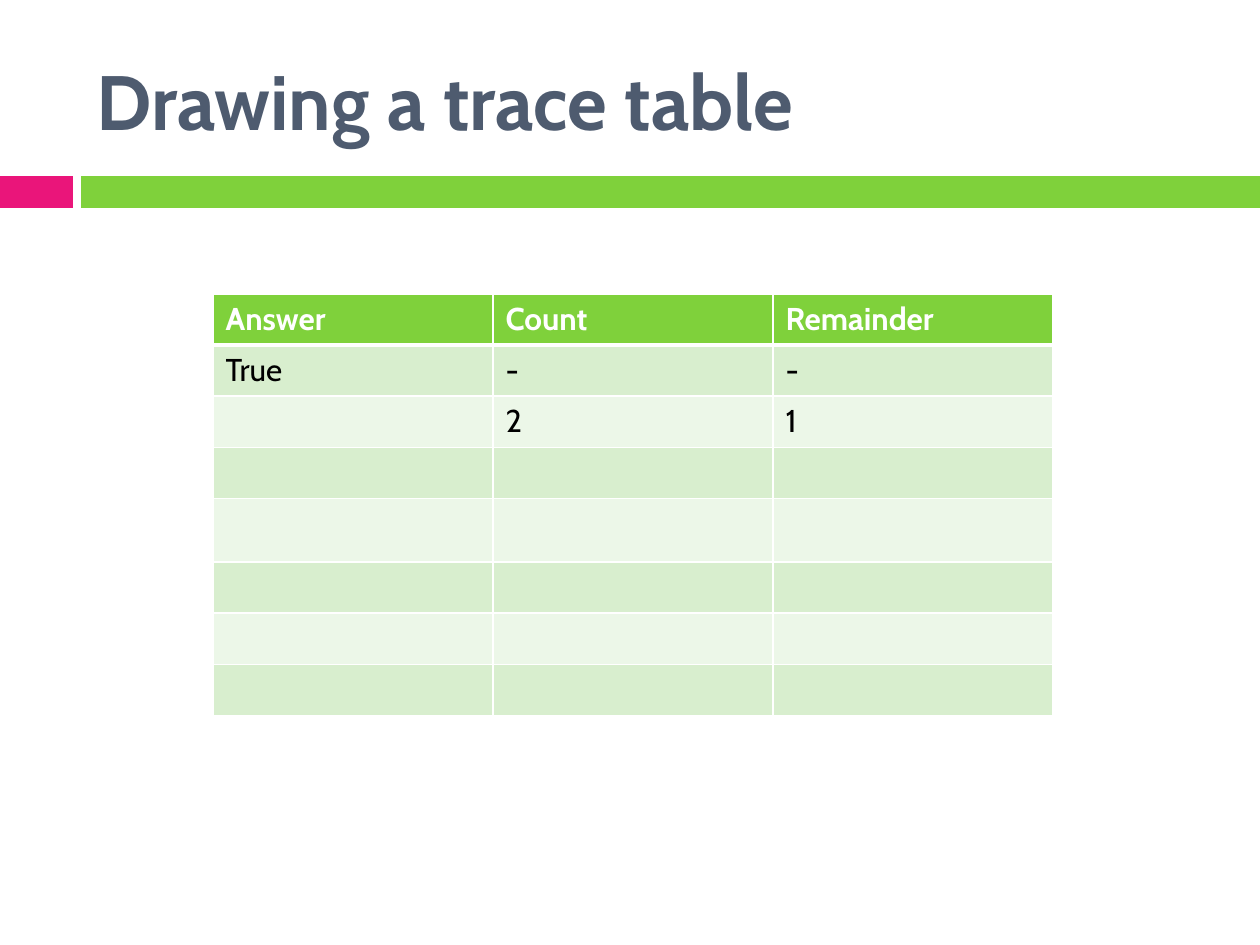
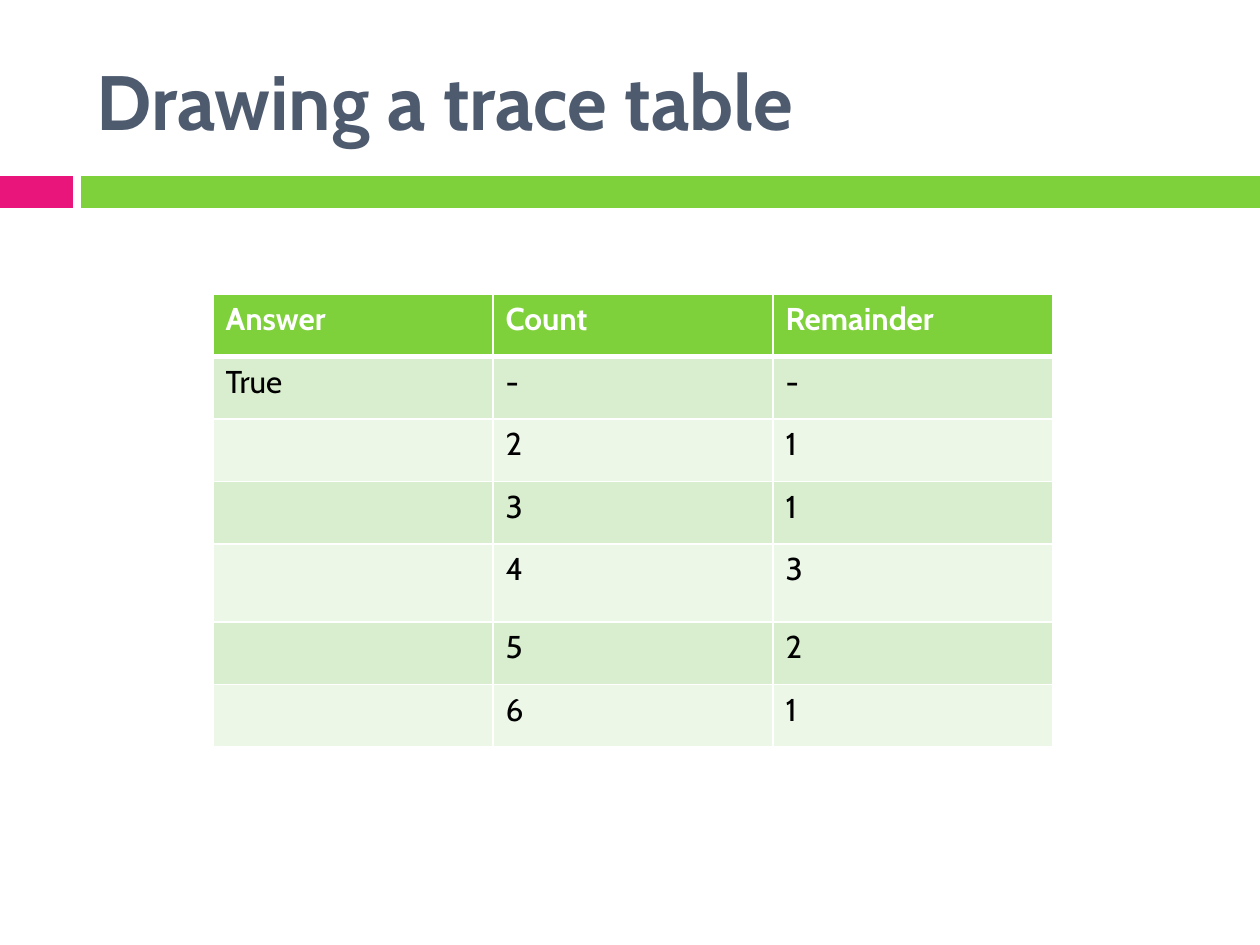
import lxml.etree
import pptx
import pptx.dml.color
import pptx.enum.shapes
import pptx.enum.text
import pptx.oxml.ns
import pptx.util

EMU_PER_PX = 914400 / 126
RGBColor = pptx.dml.color.RGBColor
PINK = RGBColor(0xEA, 0x15, 0x7A)
GREEN = RGBColor(0x7F, 0xD1, 0x3B)
SLATE = RGBColor(0x4E, 0x5B, 0x6F)
WHITE = RGBColor(0xFF, 0xFF, 0xFF)
BLACK = RGBColor(0x00, 0x00, 0x00)
ROW_FILLS = [RGBColor(0xEC, 0xF7, 0xE8), RGBColor(0xD8, 0xEE, 0xCE)]

TALL_ROW = 4
TALL_FACTOR = 1.25
HEADINGS = ["Answer", "Count", "Remainder"]
FIRST_STEPS = [["True", "-", "-"], ["", "2", "1"]]
LATER_STEPS = [["", "3", "1"], ["", "4", "3"], ["", "5", "2"], ["", "6", "1"]]


def px(length):
    return pptx.util.Emu(round(length * EMU_PER_PX))


class Deck:
    font_name = "Cabin"

    def __init__(self):
        self.presentation = pptx.Presentation()
        self.presentation.slide_width = px(1260)
        self.presentation.slide_height = px(945)
        self.slide = None

    def add_slide(self, title):
        self.slide = self.presentation.slides.add_slide(
            self.presentation.slide_layouts[5])
        self.band(0, 73, PINK)
        self.band(81, 1179, GREEN)
        self.title(title)

    def style(self, paragraph, size, color, bold):
        paragraph.alignment = pptx.enum.text.PP_ALIGN.LEFT
        font = paragraph.font
        font.name = self.font_name
        font.size = pptx.util.Pt(size)
        font.bold = bold
        font.color.rgb = color

    def title(self, text):
        shape = self.slide.shapes.title
        shape.left, shape.top = px(84), px(32)
        shape.width, shape.height = px(1124), px(136)
        frame = shape.text_frame
        frame.text = text
        frame.auto_size = pptx.enum.text.MSO_AUTO_SIZE.NONE
        frame.vertical_anchor = pptx.enum.text.MSO_ANCHOR.MIDDLE
        self.style(frame.paragraphs[0], 44, SLATE, True)

    def band(self, left, width, color):
        shape = self.slide.shapes.add_shape(
            pptx.enum.shapes.MSO_SHAPE.RECTANGLE,
            px(left), px(176), px(width), px(32))
        shape.shadow.inherit = False
        shape.fill.solid()
        shape.fill.fore_color.rgb = color
        shape.line.fill.background()

    def borders(self, cell, top, bottom):
        """Draw white cell borders, with top and bottom widths in points."""
        properties = cell._tc.get_or_add_tcPr()
        qn = pptx.oxml.ns.qn
        for side, width in (("L", 1), ("R", 1), ("T", top), ("B", bottom)):
            line = lxml.etree.SubElement(
                properties, qn(f"a:ln{side}"), w=str(pptx.util.Pt(width)))
            fill = lxml.etree.SubElement(line, qn("a:solidFill"))
            lxml.etree.SubElement(fill, qn("a:srgbClr"), val=str(WHITE))

    def table(self, rows, height):
        """Add a trace table whose tall row is a fixed factor above the rest."""
        table = self.slide.shapes.add_table(
            len(rows), len(HEADINGS), px(213), px(294), px(840), px(height)).table
        row_height = height / (len(rows) - 1 + TALL_FACTOR)
        for column in table.columns:
            column.width = px(280)
        for r, values in enumerate(rows):
            header = r == 0
            factor = TALL_FACTOR if r == TALL_ROW else 1
            table.rows[r].height = px(row_height * factor)
            for c, value in enumerate(values):
                cell = table.cell(r, c)
                cell.text = value
                self.style(cell.text_frame.paragraphs[0], 18,
                           WHITE if header else BLACK, header)
                self.borders(cell, 3 if r == 1 else 1, 3 if header else 1)
                cell.fill.solid()
                cell.fill.fore_color.rgb = GREEN if header else ROW_FILLS[r % 2]


def main():
    deck = Deck()
    blank_steps = [[""] * len(HEADINGS)] * 5
    for steps, height in ((blank_steps, 421), (LATER_STEPS, 453)):
        deck.add_slide("Drawing a trace table")
        deck.table([HEADINGS] + FIRST_STEPS + steps, height)
    deck.presentation.save("out.pptx")


if __name__ == "__main__":
    main()
